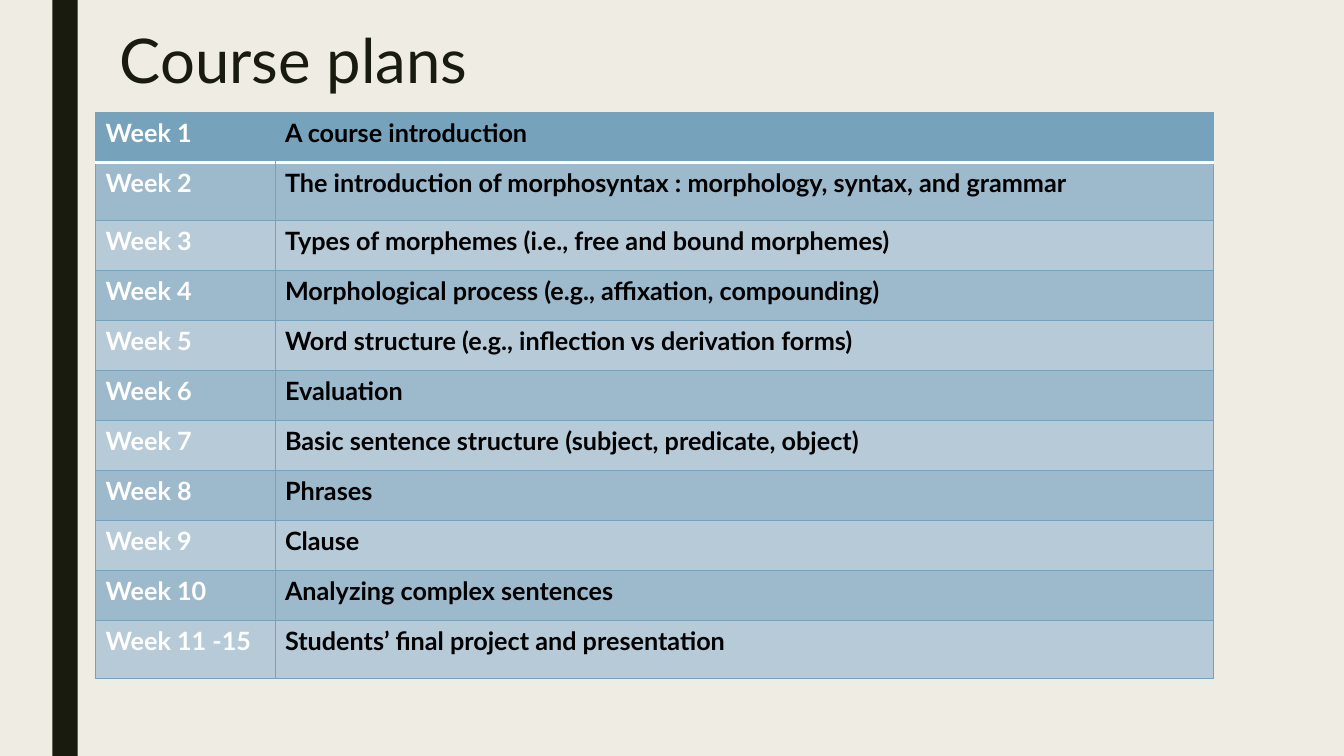
from pptx import Presentation
from pptx.dml.color import RGBColor
from pptx.enum.shapes import MSO_SHAPE
from pptx.enum.text import MSO_ANCHOR, PP_ALIGN
from pptx.oxml.xmlchemy import OxmlElement
from pptx.util import Cm, Pt

COLOURS = {
    "background": "EFEDE3",
    "dark": "191B0E",
    "header": "77A2BB",
    "band": "9DB9CC",
    "plain": "B7CAD8",
    "week": "FFFFFF",
    "topic": "000000",
    "rule": "FFFFFF",
}
TITLE_FORMAT = {"name": "Lato", "size": Pt(44), "bold": False}
CELL_FORMAT = {"name": "Lato", "size": Pt(18), "bold": True}
COLUMN_WIDTHS = [4.52, 23.65]
ROW_HEIGHT, TALL_ROW_HEIGHT = 1.26, 1.45
TALL_WEEKS = ("Week 2", "Week 11 -15")
COURSE_PLAN = [
    ("Week 1", "A course introduction"),
    ("Week 2", "The introduction of morphosyntax : morphology, syntax, and grammar"),
    ("Week 3", "Types of morphemes (i.e., free and bound morphemes)"),
    ("Week 4", "Morphological process (e.g., affixation, compounding)"),
    ("Week 5", "Word structure (e.g., inflection vs derivation forms)"),
    ("Week 6", "Evaluation"),
    ("Week 7", "Basic sentence structure (subject, predicate, object)"),
    ("Week 8", "Phrases"),
    ("Week 9", "Clause"),
    ("Week 10", "Analyzing complex sentences"),
    ("Week 11 -15", "Students’ final project and presentation"),
]


def colour(name):
    """Return the named colour."""
    return RGBColor.from_string(COLOURS[name])


def paint(fill, name):
    """Make a fill solid in the named colour."""
    fill.solid()
    fill.fore_color.rgb = colour(name)


def format_font(font, values, colour_name):
    """Apply format values and a colour to a font."""
    for attribute, value in values.items():
        setattr(font, attribute, value)
    font.color.rgb = colour(colour_name)


def add_side_bar(slide):
    """Draw the dark vertical bar at the left."""
    shape = slide.shapes.add_shape(
        MSO_SHAPE.RECTANGLE, Cm(1.32), Cm(0), Cm(0.64), Cm(19.05))
    shape.shadow.inherit = False
    shape.line.fill.background()
    paint(shape.fill, "dark")


def fill_title(slide, text):
    """Place and format the title placeholder."""
    title = slide.shapes.title
    box = {"left": 2.77, "top": 0.64, "width": 26.67, "height": 2.49}
    for attribute, length in box.items():
        setattr(title, attribute, Cm(length))
    frame = title.text_frame
    frame.text = text
    frame.vertical_anchor = MSO_ANCHOR.TOP
    paragraph = frame.paragraphs[0]
    paragraph.alignment = PP_ALIGN.LEFT
    paragraph.line_spacing = 0.89
    format_font(paragraph.runs[0].font, TITLE_FORMAT, "dark")


def add_border(cell, side, name, points):
    """Add one border line, or an empty one when name is None."""
    line = OxmlElement(f"a:ln{side}")
    line.set("w", str(Pt(points)))
    fill = OxmlElement("a:solidFill" if name else "a:noFill")
    if name:
        value = OxmlElement("a:srgbClr")
        value.set("val", COLOURS[name])
        fill.append(value)
    line.append(fill)
    cell._tc.get_or_add_tcPr().append(line)


def border_cell(cell, row, column):
    """Give a cell its thin grid lines and the rule below the header."""
    borders = {side: ("header", 0.5) for side in "LRTB"}
    if row == 0:
        borders["B"] = ("rule", 2.75)
        borders["R" if column == 0 else "L"] = (None, 0)
    elif row == 1:
        borders["T"] = ("rule", 2.75)
    for side, (name, points) in borders.items():
        add_border(cell, side, name, points)


def fill_cell(cell, text, row, column):
    """Write and format one table cell."""
    cell.text = text
    font = cell.text_frame.paragraphs[0].runs[0].font
    format_font(font, CELL_FORMAT, "topic" if column else "week")
    border_cell(cell, row, column)
    paint(cell.fill, "header" if row == 0 else "band" if row % 2 else "plain")


def add_plan_table(slide):
    """Add the table of weeks and topics."""
    heights = [TALL_ROW_HEIGHT if week in TALL_WEEKS else ROW_HEIGHT
               for week, topic in COURSE_PLAN]
    table = slide.shapes.add_table(
        len(COURSE_PLAN), len(COLUMN_WIDTHS), Cm(2.41), Cm(2.84),
        Cm(sum(COLUMN_WIDTHS)), Cm(sum(heights))).table
    for column, width in zip(table.columns, COLUMN_WIDTHS):
        column.width = Cm(width)
    for row, height in enumerate(heights):
        table.rows[row].height = Cm(height)
        for column, text in enumerate(COURSE_PLAN[row]):
            fill_cell(table.cell(row, column), text, row, column)


def main():
    """Build and save the slide."""
    presentation = Presentation()
    presentation.slide_width = Cm(33.87)
    presentation.slide_height = Cm(19.05)
    slide = presentation.slides.add_slide(presentation.slide_layouts[5])
    paint(slide.background.fill, "background")
    add_side_bar(slide)
    fill_title(slide, "Course plans")
    add_plan_table(slide)
    presentation.save("out.pptx")


if __name__ == "__main__":
    main()
